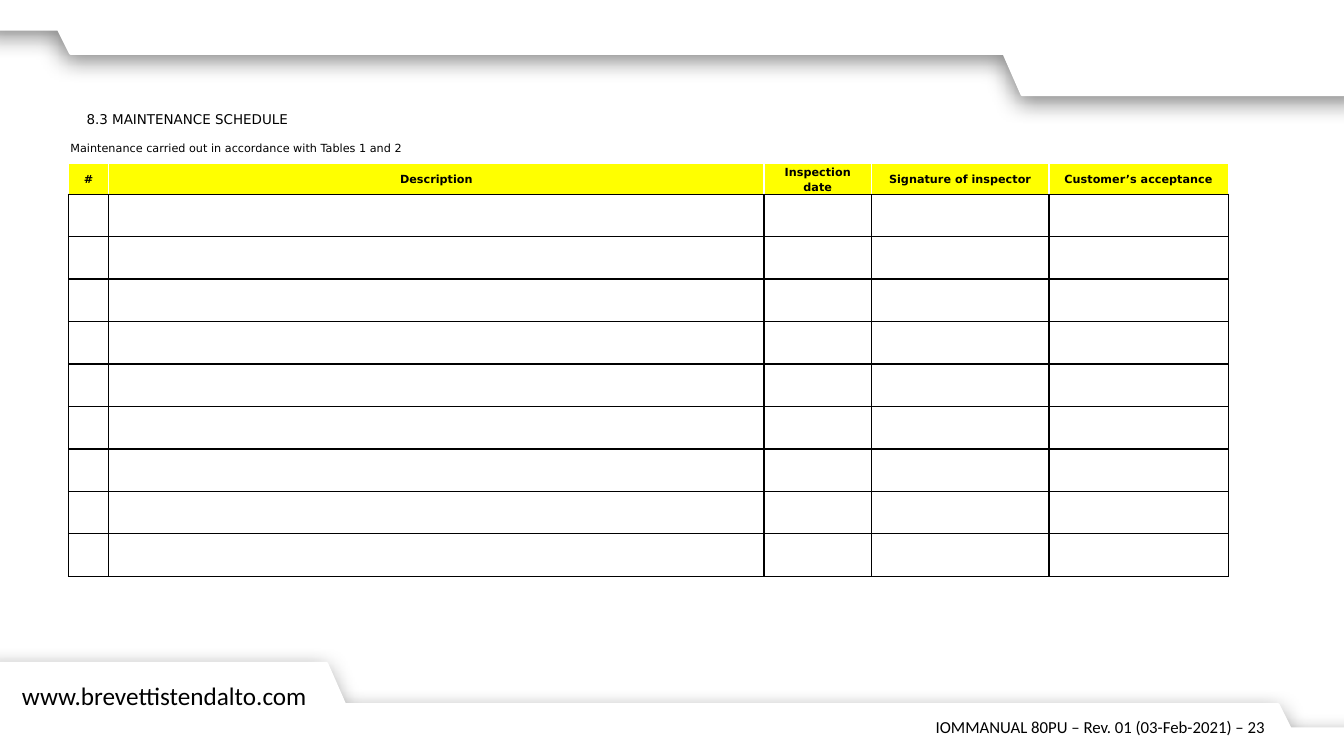
from dataclasses import dataclass

from lxml.etree import SubElement
from pptx import Presentation
from pptx.dml.color import RGBColor
from pptx.enum.text import MSO_ANCHOR, MSO_AUTO_SIZE, PP_ALIGN
from pptx.oxml.ns import qn
from pptx.util import Inches, Pt

COLORS = {"paper": "FFFFFF", "ink": "000000", "header": "FFFF00"}
COL = Inches(13.33) / 100
ROW = Inches(7.5) / 100
BODY_ROWS = 9
HEADER_HEIGHT, BODY_HEIGHT = 4.07, 5.62


@dataclass
class Label:
    text: str
    left: float
    top: float
    width: float
    height: float
    size: float
    font: str
    align: PP_ALIGN = PP_ALIGN.LEFT
    small_caps: bool = False


@dataclass
class Column:
    title: str
    width: float


@dataclass
class Band:
    top: float
    rotation: float


OUTLINE = [(-0.9, 3.87), (4.35, 3.87), (5.25, 7.07), (74.7, 7.07), (76.05, 12.53),
           (101.25, 12.53), (101.25, -1.33), (-0.9, -1.33)]
BANDS = [Band(87.73, 180), Band(-1.33, 0)]
COLUMNS = [
    Column("#", 3),
    Column("Description", 48.75),
    Column("Inspection date", 8),
    Column("Signature of inspector", 13.2),
    Column("Customer’s acceptance", 13.35),
]
WEBSITE = Label("www.brevettistendalto.com", 0.9, 89.33, 23.03, 5.33, 18, "Calibri")
LABELS = [
    Label("8.3 maintenance schedule", 5.7, 13.6, 40, 4, 12, "DejaVu Sans", small_caps=True),
    Label("Maintenance carried out in accordance with Tables 1 and 2",
          4.5, 18, 59, 7.2, 8, "DejaVu Sans"),
    Label("IOMMANUAL 80PU – Rev. 01 (03-Feb-2021) – 23",
          65.93, 94.13, 28.95, 4, 12, "Calibri", PP_ALIGN.RIGHT),
]


def rgb(name: str) -> RGBColor:
    return RGBColor.from_string(COLORS[name])


def x(cols: float) -> int:
    return round(cols * COL)


def y(rows: float) -> int:
    return round(rows * ROW)


def write(tf, text: str, *, size: float, font: str, align=PP_ALIGN.LEFT, bold=False,
          small_caps=False, line_spacing=None, space_after=None) -> None:
    p = tf.paragraphs[0]
    p.alignment = align
    p.line_spacing = line_spacing
    p.space_after = space_after
    r = p.add_run()
    r.text = text
    r.font.size = Pt(size)
    r.font.name = font
    r.font.bold = bold
    r.font.color.rgb = rgb("ink")
    if small_caps:
        r.font._element.set("cap", "small")


def add_shadow(sp) -> None:
    sp.shadow.inherit = False
    effects = sp._element.spPr.find(qn("a:effectLst"))
    shadow = SubElement(effects, qn("a:outerShdw"), blurRad=str(Pt(16)), dist=str(Pt(4)),
                        dir=str(123 * 60000), algn="ctr", rotWithShape="0")
    color = SubElement(shadow, qn("a:srgbClr"), val=COLORS["ink"])
    SubElement(color, qn("a:alpha"), val="48000")


def add_band(s, band: Band) -> None:
    points = [(x(px), y(py)) for px, py in OUTLINE]
    builder = s.shapes.build_freeform(*points[0])
    builder.add_line_segments(points[1:], close=True)
    sp = builder.convert_to_shape()
    sp.top = y(band.top)
    sp.rotation = band.rotation
    sp.fill.solid()
    sp.fill.fore_color.rgb = rgb("paper")
    sp.line.color.rgb = rgb("paper")
    sp.line.width = Pt(2)
    add_shadow(sp)


def add_label(s, label: Label) -> None:
    sp = s.shapes.add_textbox(x(label.left), y(label.top), x(label.width), y(label.height))
    tf = sp.text_frame
    tf.word_wrap = True
    tf.auto_size = MSO_AUTO_SIZE.SHAPE_TO_FIT_TEXT
    write(tf, label.text, size=label.size, font=label.font, align=label.align,
          small_caps=label.small_caps)


def style_cell(cell, fill: str, sides: dict[str, str]) -> None:
    cell.fill.solid()
    cell.fill.fore_color.rgb = rgb(fill)
    props = cell._tc.get_or_add_tcPr()
    for i, (side, color) in enumerate(sides.items()):
        line = SubElement(props, qn(f"a:ln{side}"), w=str(Pt(1)))
        props.insert(i, line)
        solid = SubElement(line, qn("a:solidFill"))
        SubElement(solid, qn("a:srgbClr"), val=COLORS[color])


def add_schedule(s) -> None:
    width = sum(c.width for c in COLUMNS)
    height = HEADER_HEIGHT + BODY_ROWS * BODY_HEIGHT
    table = s.shapes.add_table(BODY_ROWS + 1, len(COLUMNS), x(5.1), y(21.6),
                               x(width), y(height)).table
    table.first_row = table.horz_banding = False
    for i, row in enumerate(table.rows):
        row.height = y(BODY_HEIGHT if i else HEADER_HEIGHT)
        for cell in row.cells:
            edge = "ink" if i else "paper"
            style_cell(cell, "paper" if i else "header",
                       {"L": edge, "R": edge, "T": "ink" if i else "paper", "B": "ink"})
    for i, column in enumerate(COLUMNS):
        table.columns[i].width = x(column.width)
        cell = table.cell(0, i)
        cell.vertical_anchor = MSO_ANCHOR.MIDDLE
        cell.margin_left = cell.margin_right = Inches(0.05)
        cell.margin_top = cell.margin_bottom = 0
        write(cell.text_frame, column.title, size=8, font="DejaVu Sans", bold=True,
              align=PP_ALIGN.CENTER, line_spacing=1.15, space_after=Pt(4))


def main() -> None:
    """Build the maintenance schedule slide."""
    prs = Presentation()
    prs.slide_width, prs.slide_height = Inches(13.33), Inches(7.5)
    s = prs.slides.add_slide(prs.slide_layouts[6])
    for band in BANDS:
        add_band(s, band)
    add_label(s, WEBSITE)
    add_schedule(s)
    for label in LABELS:
        add_label(s, label)
    prs.save("out.pptx")


if __name__ == "__main__":
    main()
